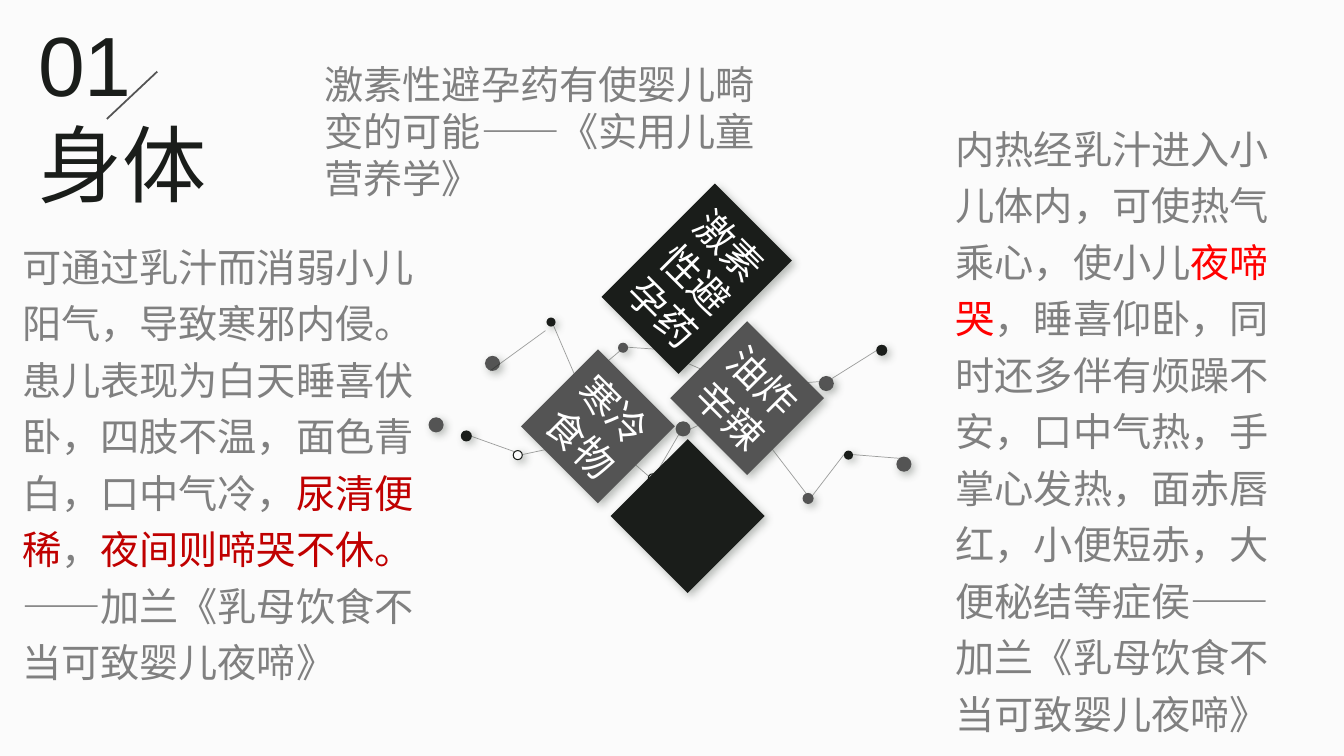
"""Build a slide on how a nursing mother's diet affects her baby's body."""
from dataclasses import dataclass
from typing import Any, Optional

from lxml.etree import SubElement
from pptx import Presentation
from pptx.dml.color import RGBColor
from pptx.enum.shapes import MSO_CONNECTOR, MSO_SHAPE
from pptx.enum.text import MSO_ANCHOR, MSO_AUTO_SIZE, PP_ALIGN
from pptx.oxml.ns import qn
from pptx.util import Inches, Pt

COLORS = {
    "background": "FBFBFB", "dark": "1A1D1A", "gray": "545454", "pale": "BFBFBF",
    "white": "FFFFFF", "body": "808080", "crimson": "C00000", "red": "FF0000",
    "shadow": "505950",
}
LATIN, CHINESE = "Arial", "Noto Sans CJK SC"


@dataclass(frozen=True)
class Link:
    x1: float
    y1: float
    x2: float
    y2: float
    color: str = "dark"
    width: float = 0.5
    opacity: Optional[int] = 41


@dataclass(frozen=True)
class Dot:
    left: float
    top: float
    size: float
    color: str


@dataclass(frozen=True)
class Tile:
    left: float
    top: float
    height: float
    color: str
    label: str = ""


@dataclass(frozen=True)
class TextBlock:
    left: float
    top: float
    width: float
    height: float
    paragraphs: list[list[tuple[str, str]]]
    paragraph_format: dict[str, Any]
    size: int = 28
    font: str = CHINESE


BACK_LINKS = [
    Link(7.78, 3.88, 7.58, 4.31), Link(8.2, 3.78, 7.82, 3.81),
    Link(8.18, 3.8, 8.69, 3.48), Link(7.18, 4.11, 7.55, 4.35, "pale", opacity=None),
    Link(7.07, 4.15, 6.8, 4.28), Link(5.18, 4.51, 5.93, 4.35),
    Link(4.68, 4.33, 5.1, 4.48), Link(6.44, 4.73, 5.97, 4.32),
    Link(6.5, 4.71, 6.75, 4.28), Link(7.02, 3.68, 7.14, 4.12),
    Link(7.18, 4.11, 7.55, 4.35), Link(8.46, 4.51, 8.96, 4.55),
    Link(8.04, 4.94, 8.37, 4.51), Link(8.03, 4.94, 7.57, 4.34),
    Link(6.15, 3.44, 6.59, 3.47), Link(6.15, 3.48, 5.77, 3.8),
    Link(6.65, 3.53, 6.97, 3.67),
]
DOTS = [
    Dot(8.69, 3.42, 0.11, "dark"), Dot(8.12, 3.73, 0.15, "gray"),
    Dot(8.37, 4.47, 0.09, "dark"), Dot(7.76, 3.79, 0.11, "dark"),
    Dot(8.89, 4.53, 0.15, "gray"), Dot(6.97, 3.62, 0.09, "background"),
    Dot(7.96, 4.89, 0.11, "gray"), Dot(7.46, 4.27, 0.15, "gray"),
    Dot(4.25, 4.14, 0.15, "gray"), Dot(4.81, 3.53, 0.15, "gray"),
    Dot(5.09, 4.47, 0.09, "background"), Dot(5.42, 3.15, 0.09, "dark"),
    Dot(5.68, 3.79, 0.11, "dark"), Dot(4.57, 4.27, 0.11, "dark"),
    Dot(6.58, 3.46, 0.09, "background"), Dot(6.13, 3.4, 0.1, "gray"),
    Dot(6.43, 4.7, 0.09, "background"), Dot(6.33, 4.07, 0.12, "gray"),
    Dot(5.93, 4.27, 0.15, "gray"), Dot(6.7, 4.18, 0.15, "gray"),
    Dot(7.09, 4.07, 0.13, "background"),
]
FRONT_LINKS = [Link(4.86, 3.68, 5.41, 3.28), Link(5.73, 3.79, 5.49, 3.23)]
TILE_WIDTH = 1.08
TILES = [
    Tile(6.87, 3.41, TILE_WIDTH, "gray", "油炸辛辣"),
    Tile(6.28, 4.58, TILE_WIDTH, "dark"),
    Tile(6.37, 1.97, 1.59, "dark", "激素性避孕药"),
    Tile(5.39, 3.69, TILE_WIDTH, "gray", "寒冷食物"),
]
TITLE = TextBlock(0.28, 0.07, 2.61, 2.12, [[("01", "dark")], [("身体", "dark")]],
                  {"alignment": PP_ALIGN.JUSTIFY}, 60, LATIN)
TITLE_SLASH = Link(1.56, 0.71, 1.06, 1.18, "gray", 1.25, None)
BODY_BLOCKS = [
    TextBlock(0.12, 2.27, 4.29, 4.62, [[
        ("可通过乳汁而消弱小儿阳气，导致寒邪内侵。患儿表现为白天睡喜伏卧，"
         "四肢不温，面色青白，口中气冷，", "body"),
        ("尿清便稀", "crimson"), ("，", "body"), ("夜间则啼哭不休。", "crimson"),
        ("——加兰《乳母饮食不当可致婴儿夜啼》", "body"),
    ]], {"line_spacing": 1.2}),
    TextBlock(9.38, 1.1, 3.59, 6.32, [[
        ("内热经乳汁进入小儿体内，可使热气乘心，使小儿", "body"), ("夜啼哭", "red"),
        ("，睡喜仰卧，同时还多伴有烦躁不安，口中气热，手掌心发热，面赤唇红，"
         "小便短赤，大便秘结等症侯——加兰《乳母饮食不当可致婴儿夜啼》", "body"),
    ]], {"line_spacing": 1.2}, font=LATIN),
    TextBlock(3.12, 0.55, 4.64, 1.51, [[
        ("激素性避孕药有使婴儿畸变的可能——《实用儿童营养学》", "body"),
    ]], {}),
]


def rgb(name: str) -> RGBColor:
    return RGBColor.from_string(COLORS[name])


def apply_format(target: Any, values: dict[str, Any]) -> None:
    for name, value in values.items():
        setattr(target, name, value)


def add_run(paragraph: Any, text: str, color: str, size: int, font: str) -> None:
    run = paragraph.add_run()
    run.text = text
    apply_format(run.font, {"size": Pt(size), "name": font})
    run.font.color.rgb = rgb(color)
    latin = run.font.element.find(qn("a:latin")) if hasattr(run.font, "element") else None
    if latin is not None:
        latin.set("typeface", font)


def add_link(slide: Any, link: Link) -> None:
    connector = slide.shapes.add_connector(
        MSO_CONNECTOR.STRAIGHT, *map(Inches, (link.x1, link.y1, link.x2, link.y2)))
    connector.line.width = Pt(link.width)
    connector.line.color.rgb = rgb(link.color)
    properties = connector.element.find(qn("p:spPr"))
    if link.opacity is not None:
        color = next(properties.iter(qn("a:srgbClr")))
        SubElement(color, qn("a:alpha"), val=str(link.opacity * 1000))
    SubElement(properties, qn("a:effectLst"))


def add_shadowed_shape(slide: Any, kind: Any, left: float, top: float,
                       width: float, height: float, color: str) -> Any:
    shape = slide.shapes.add_shape(kind, *map(Inches, (left, top, width, height)))
    shape.fill.solid()
    shape.fill.fore_color.rgb = rgb(color)
    shape.line.fill.background()
    shape.shadow.inherit = False
    effects = next(shape.element.iter(qn("a:effectLst")))
    shadow = SubElement(effects, qn("a:outerShdw"), blurRad=str(Pt(6)), dist=str(Pt(3)),
                        dir=str(45 * 60000), algn="tl", rotWithShape="0")
    shade = SubElement(shadow, qn("a:srgbClr"), val=COLORS["shadow"])
    SubElement(shade, qn("a:alpha"), val="40000")
    return shape


def add_dot(slide: Any, dot: Dot) -> None:
    shape = add_shadowed_shape(slide, MSO_SHAPE.OVAL, dot.left, dot.top,
                               dot.size, dot.size, dot.color)
    if dot.color == "background":
        shape.line.color.rgb = rgb("dark")
        shape.line.width = Pt(0.75)


def add_tile(slide: Any, tile: Tile) -> None:
    shape = add_shadowed_shape(slide, MSO_SHAPE.RECTANGLE, tile.left, tile.top,
                               TILE_WIDTH, tile.height, tile.color)
    shape.rotation = 45
    if tile.label:
        apply_format(shape.text_frame, {"word_wrap": True, "vertical_anchor": MSO_ANCHOR.MIDDLE})
        paragraph = shape.text_frame.paragraphs[0]
        paragraph.alignment = PP_ALIGN.CENTER
        add_run(paragraph, tile.label, "white", 28, LATIN)


def add_text_block(slide: Any, block: TextBlock) -> None:
    box = slide.shapes.add_textbox(
        *map(Inches, (block.left, block.top, block.width, block.height)))
    frame = box.text_frame
    apply_format(frame, {"word_wrap": True, "auto_size": MSO_AUTO_SIZE.SHAPE_TO_FIT_TEXT})
    for index, runs in enumerate(block.paragraphs):
        paragraph = frame.add_paragraph() if index else frame.paragraphs[0]
        apply_format(paragraph, block.paragraph_format)
        for text, color in runs:
            add_run(paragraph, text, color, block.size, block.font)


def main() -> None:
    presentation = Presentation()
    apply_format(presentation, {"slide_width": Inches(13.33), "slide_height": Inches(7.5)})
    slide = presentation.slides.add_slide(presentation.slide_layouts[6])
    slide.background.fill.solid()
    slide.background.fill.fore_color.rgb = rgb("background")
    for link in BACK_LINKS:
        add_link(slide, link)
    for dot in DOTS:
        add_dot(slide, dot)
    for link in FRONT_LINKS:
        add_link(slide, link)
    for tile in TILES:
        add_tile(slide, tile)
    add_text_block(slide, TITLE)
    add_link(slide, TITLE_SLASH)
    for block in BODY_BLOCKS:
        add_text_block(slide, block)
    presentation.save("out.pptx")


if __name__ == "__main__":
    main()
